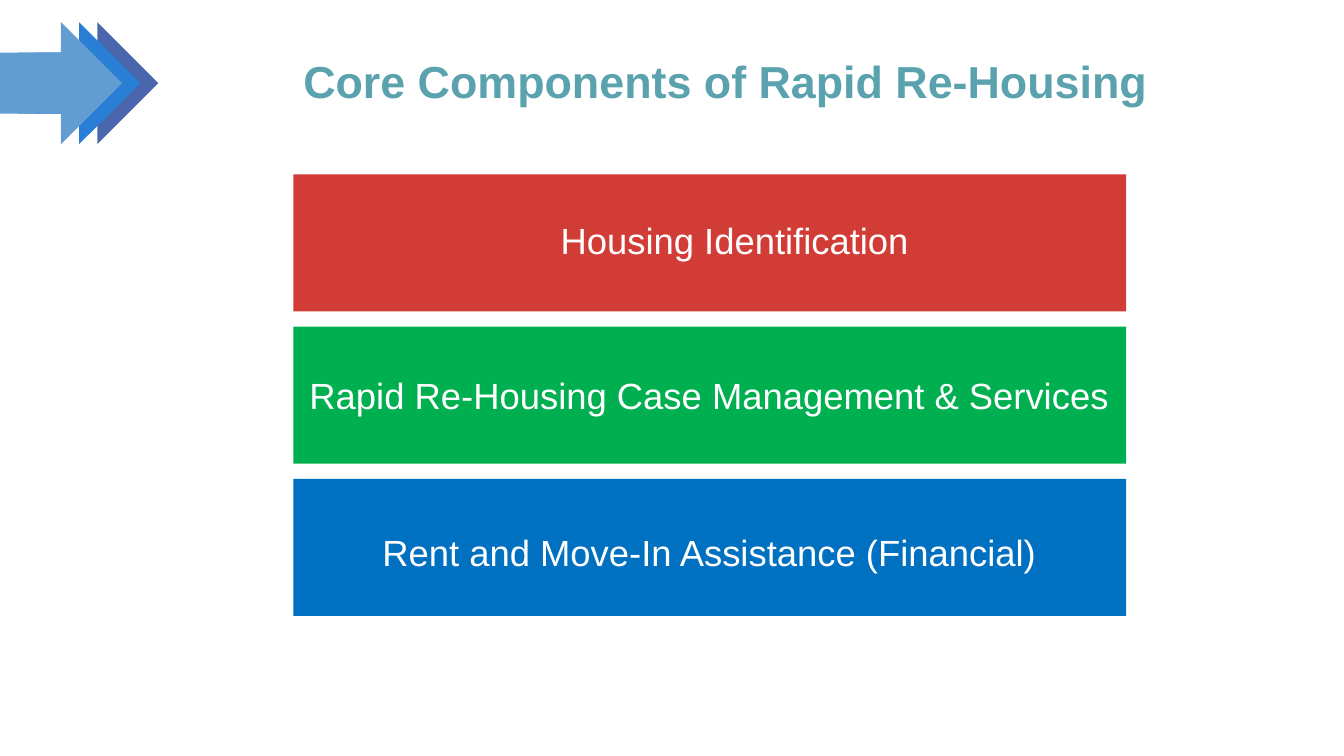
import pptx
import pptx.util
import pptx.dml.color
import pptx.enum.shapes
import pptx.enum.text

Inches = pptx.util.Inches
Pt = pptx.util.Pt
SHAPE = pptx.enum.shapes.MSO_SHAPE
ALIGN = pptx.enum.text.PP_ALIGN

COLORS = {
    "arrow_back": "4A66AC", "arrow_middle": "297FD5", "arrow_front": "629DD1",
    "title": "5AA2AE", "white": "FFFFFF",
    "red": "D13D36", "green": "00B050", "blue": "0070C0",
}

LEFT, TOP = 2.91, 1.73
BAR_WIDTH, BAR_HEIGHT, ROW_PITCH = 8.26, 1.36, 1.51
ARROW_TOP, ARROW_SIZE, ARROW_STEP = 0.22, 1.21, 0.18


def add_block(slide, kind, left, top, width, height, color):
    shape = slide.shapes.add_shape(
        kind, Inches(left), Inches(top), Inches(width), Inches(height))
    shape.shadow.inherit = False
    shape.fill.solid()
    shape.fill.fore_color.rgb = pptx.dml.color.RGBColor.from_string(COLORS[color])
    shape.line.fill.background()
    return shape


def write_text(shape, text, color, font_format, paragraph_format):
    frame = shape.text_frame
    frame.word_wrap = True
    frame.vertical_anchor = pptx.enum.text.MSO_ANCHOR.MIDDLE
    paragraph = frame.paragraphs[0]
    for name, value in paragraph_format.items():
        setattr(paragraph, name, value)
    run = paragraph.add_run()
    run.text = text
    for name, value in font_format.items():
        setattr(run.font, name, value)
    run.font.color.rgb = pptx.dml.color.RGBColor.from_string(COLORS[color])
    return paragraph


presentation = pptx.Presentation()
presentation.slide_width = Inches(13.33)
presentation.slide_height = Inches(7.5)
slide = presentation.slides.add_slide(presentation.slide_layouts[6])

for step, color in enumerate(["arrow_front", "arrow_middle", "arrow_back"][::-1]):
    add_block(slide, SHAPE.RIGHT_ARROW, (2 - step) * ARROW_STEP, ARROW_TOP,
              ARROW_SIZE, ARROW_SIZE, color)

title = slide.shapes.add_textbox(
    Inches(LEFT), Inches(ARROW_TOP), Inches(8.76), Inches(1.23))
write_text(title, "Core Components of Rapid Re-Housing", "title",
           {"name": "Arial", "size": Pt(32), "bold": True},
           {"alignment": ALIGN.LEFT, "line_spacing": 0.9})

components = [
    ("Housing Identification", "red", 0.9, 5, 0.5),
    ("Rapid Re-Housing Case Management & Services", "green", 1.0, 0, 0),
    ("Rent and Move-In Assistance (Financial)", "blue", 1.2, 0, 0),
]
for row, (text, color, line_spacing, space_before, indent) in enumerate(components):
    bar = add_block(slide, SHAPE.RECTANGLE, LEFT, TOP + row * ROW_PITCH,
                    BAR_WIDTH, BAR_HEIGHT, color)
    margins = {"margin_left": 0.07, "margin_right": 0.07,
               "margin_top": 0.04, "margin_bottom": 0.04}
    for name, value in margins.items():
        setattr(bar.text_frame, name, Inches(value))
    paragraph = write_text(
        bar, text, "white", {"name": "Arial", "size": Pt(26)},
        {"alignment": ALIGN.CENTER, "line_spacing": line_spacing,
         "space_before": Pt(space_before)})
    paragraph._p.get_or_add_pPr().set("marL", str(Inches(indent)))

presentation.save("out.pptx")
